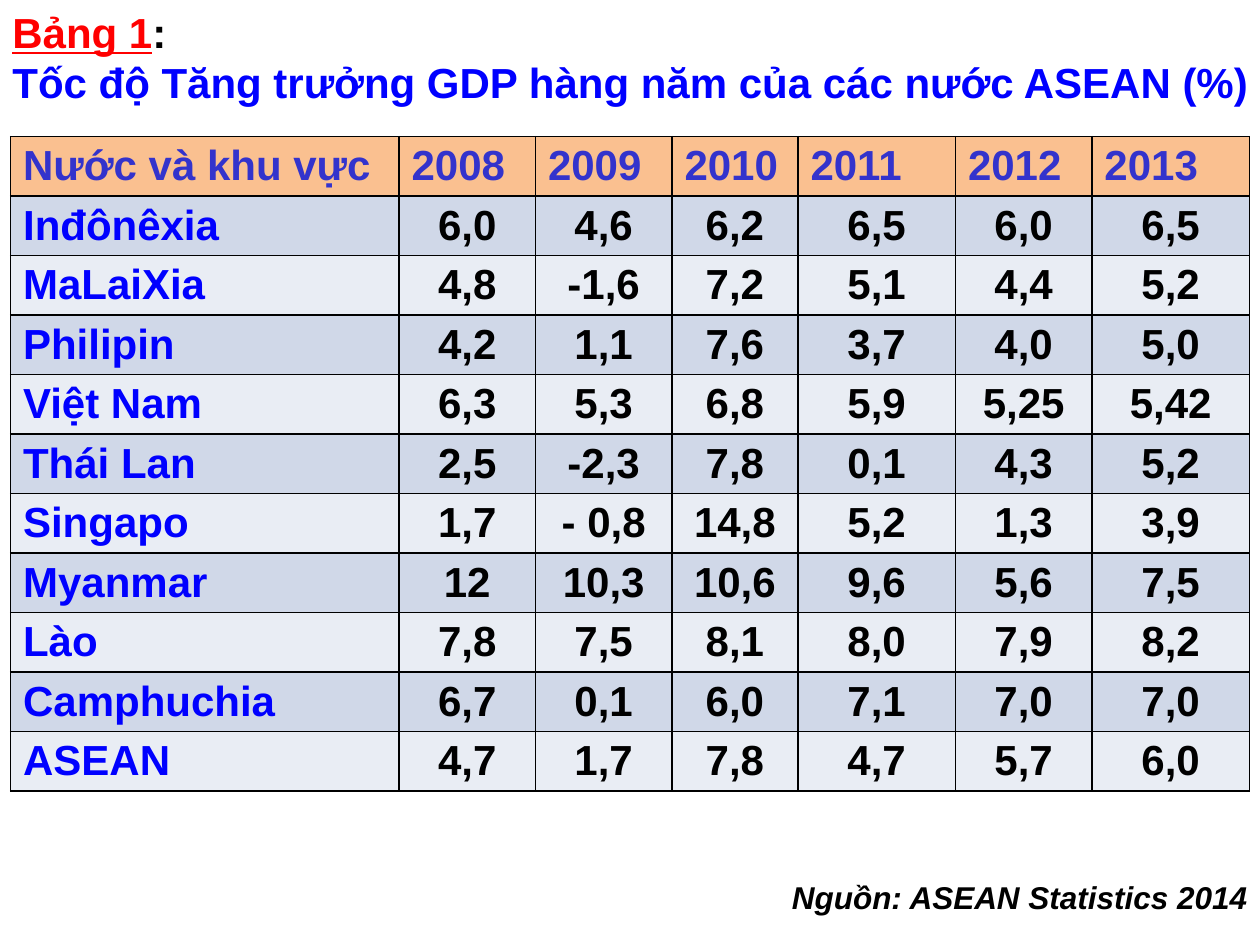
"""Build a slide with a table of yearly GDP growth in the ASEAN countries."""
from lxml.etree import SubElement
from pptx import Presentation
from pptx.dml.color import RGBColor
from pptx.enum.text import MSO_AUTO_SIZE, PP_ALIGN
from pptx.oxml.ns import qn
from pptx.util import Pt


def style(font, color, size=24):
    font.name = "Arial"
    font.size = Pt(size)
    font.bold = True
    font.color.rgb = RGBColor.from_string(color)


def add_text_box(page, left, top, width, height):
    frame = page.shapes.add_textbox(Pt(left), Pt(top), Pt(width), Pt(height)).text_frame
    frame.word_wrap = True
    frame.auto_size = MSO_AUTO_SIZE.SHAPE_TO_FIT_TEXT
    return frame


BLACK, BLUE, RED, INDIGO = "000000", "0000FF", "FF0000", "3333CC"
HEADER_FILL = "FAC090"
BAND_FILLS = ["E9EDF4", "D0D8E8"]
ROW_HEIGHT = 34
COLUMN_WIDTHS = [222, 78, 78, 72, 90, 78, 90]
GROWTH = [
    ["Nước và khu vực", "2008", "2009", "2010", "2011", "2012", "2013"],
    ["Inđônêxia", "6,0", "4,6", "6,2", "6,5", "6,0", "6,5"],
    ["MaLaiXia", "4,8", "-1,6", "7,2", "5,1", "4,4", "5,2"],
    ["Philipin", "4,2", "1,1", "7,6", "3,7", "4,0", "5,0"],
    ["Việt Nam", "6,3", "5,3", "6,8", "5,9", "5,25", "5,42"],
    ["Thái Lan", "2,5", "-2,3", "7,8", "0,1", "4,3", "5,2"],
    ["Singapo", "1,7", "- 0,8", "14,8", "5,2", "1,3", "3,9"],
    ["Myanmar", "12", "10,3", "10,6", "9,6", "5,6", "7,5"],
    ["Lào", "7,8", "7,5", "8,1", "8,0", "7,9", "8,2"],
    ["Camphuchia", "6,7", "0,1", "6,0", "7,1", "7,0", "7,0"],
    ["ASEAN", "4,7", "1,7", "7,8", "4,7", "5,7", "6,0"],
]

deck = Presentation()
deck.slide_width, deck.slide_height = Pt(720), Pt(540)
page = deck.slides.add_slide(deck.slide_layouts[6])

table = page.shapes.add_table(
    len(GROWTH), len(COLUMN_WIDTHS), Pt(6), Pt(78),
    Pt(sum(COLUMN_WIDTHS)), Pt(ROW_HEIGHT * len(GROWTH)),
).table
for column, width in zip(table.columns, COLUMN_WIDTHS):
    column.width = Pt(width)

for row_index, values in enumerate(GROWTH):
    table.rows[row_index].height = Pt(ROW_HEIGHT)
    for column_index, value in enumerate(values):
        cell = table.cell(row_index, column_index)
        cell.text = value
        para = cell.text_frame.paragraphs[0]
        if row_index == 0:
            fill, color = HEADER_FILL, INDIGO
        else:
            fill = BAND_FILLS[row_index % 2]
            color = BLACK if column_index else BLUE
            if column_index:
                para.alignment = PP_ALIGN.CENTER
        style(para.font, color)
        properties = cell._tc.get_or_add_tcPr()
        for side in ["a:lnL", "a:lnR", "a:lnT", "a:lnB"]:
            border = SubElement(properties, qn(side), w=str(Pt(1)))
            SubElement(SubElement(border, qn("a:solidFill")), qn("a:srgbClr"), val=BLACK)
        cell.fill.solid()
        cell.fill.fore_color.rgb = RGBColor.from_string(fill)

title = add_text_box(page, 0, 0, 738, 65.5)
label = title.paragraphs[0]
for text, color, underline in [("Bảng 1", RED, True), (":", BLACK, False)]:
    span = label.add_run()
    span.text = text
    style(span.font, color)
    span.font.underline = underline
heading = title.add_paragraph()
heading.text = "Tốc độ Tăng trưởng GDP hàng năm của các nước ASEAN (%)"
style(heading.font, BLUE)

credit = add_text_box(page, 438, 498, 282, 29).paragraphs[0]
credit.text = "Nguồn: ASEAN Statistics 2014"
credit.alignment = PP_ALIGN.RIGHT
style(credit.font, BLACK, 18)
credit.font.italic = True

deck.save("out.pptx")
